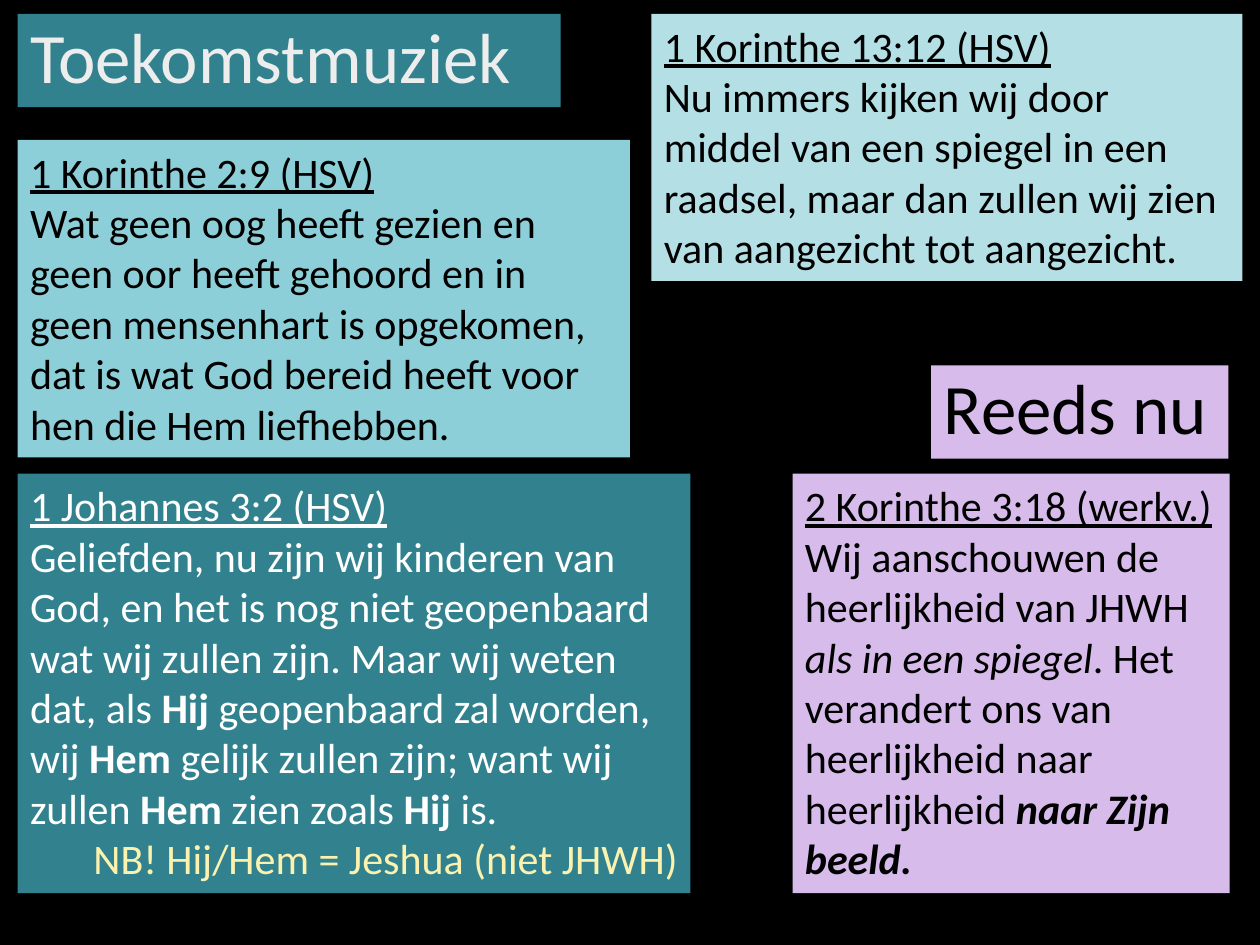
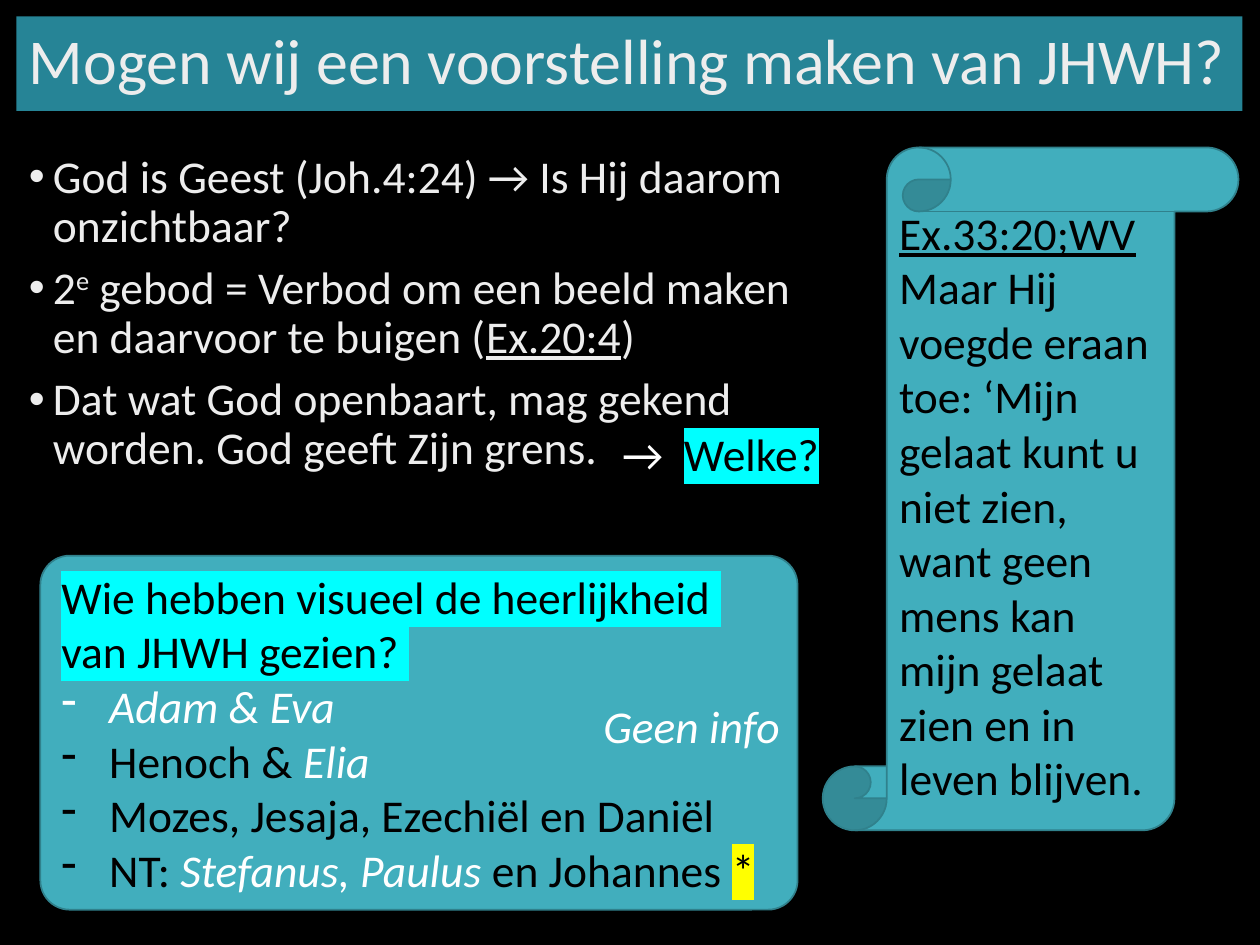
from dataclasses import dataclass

from lxml import etree
from pptx import Presentation
from pptx.dml.color import RGBColor
from pptx.enum.shapes import MSO_SHAPE
from pptx.enum.text import MSO_ANCHOR, MSO_AUTO_SIZE, PP_ALIGN
from pptx.oxml.ns import qn
from pptx.util import Inches, Pt

RECT, ROUNDED, SCROLL = (MSO_SHAPE.RECTANGLE, MSO_SHAPE.ROUNDED_RECTANGLE,
                         MSO_SHAPE.VERTICAL_SCROLL)
TOP, MIDDLE = MSO_ANCHOR.TOP, MSO_ANCHOR.MIDDLE
LEFT, RIGHT = PP_ALIGN.LEFT, PP_ALIGN.RIGHT
TITLE_AND_BODY, TITLE_ONLY = 1, 5


@dataclass(frozen=True)
class Theme:
    font: str = "Calibri"
    heading: float = 40.5
    long_heading: float = 36.5
    verse: float = 24
    body: float = 26
    black: str = "000000"
    white: str = "FFFFFF"
    silver: str = "EDEDED"
    cream: str = "FBF2B0"
    deep_teal: str = "31828E"
    title_teal: str = "268496"
    aqua: str = "8DCFD8"
    pale_aqua: str = "B3DFE5"
    lilac: str = "D6BBEB"
    turquoise: str = "41AEBD"
    outline: str = "30818C"
    cyan: str = "00FFFF"
    yellow: str = "FFFF00"


T = Theme()
BOLD, ITALIC, UNDERLINE = {"bold": True}, {"italic": True}, {"underline": True}
SUPERSCRIPT = {"raised": True}
WHITE_ITALIC = {"color": T.white, "italic": True}
CYAN_MARK, YELLOW_MARK = {"mark": T.cyan}, {"mark": T.yellow}


class Deck:
    def __init__(self):
        self.prs = Presentation()
        self.prs.slide_width, self.prs.slide_height = Inches(10), Inches(7.5)
        self.s = None

    def slide(self, layout):
        self.s = self.prs.slides.add_slide(self.prs.slide_layouts[layout])
        fill = self.s.background.fill
        fill.solid()
        fill.fore_color.rgb = RGBColor.from_string(T.black)

    def place(self, sp, box):
        sp.left, sp.top, sp.width, sp.height = map(Inches, box)

    def fill(self, sp, color):
        sp.fill.solid()
        sp.fill.fore_color.rgb = RGBColor.from_string(color)

    def add_run(self, p, text, size, color, bold=None, italic=None,
                underline=None, raised=False, mark=None):
        r = p.add_run()
        r.text = text
        f = r.font
        f.name, f.size = T.font, Pt(size)
        f.bold, f.italic, f.underline = bold, italic, underline
        f.color.rgb = RGBColor.from_string(color)
        rpr = r._r.get_or_add_rPr()
        if raised:
            rpr.set("baseline", "30000")
        if mark:
            highlight = etree.Element(qn("a:highlight"))
            etree.SubElement(highlight, qn("a:srgbClr"), val=mark)
            rpr.find(qn("a:solidFill")).addnext(highlight)

    def bullet(self, p, char, indent):
        ppr = p._p.get_or_add_pPr()
        ppr.set("marL", str(Inches(indent)))
        ppr.set("indent", str(-Inches(indent)))
        etree.SubElement(ppr, qn("a:buChar"), char=char)

    def tab_stop(self, p, pos):
        tabs = etree.SubElement(p._p.get_or_add_pPr(), qn("a:tabLst"))
        etree.SubElement(tabs, qn("a:tab"), pos=str(Inches(pos)), algn="l")

    def set_text(self, sp, paragraphs, size, color, anchor=TOP, spacing=None):
        """Each paragraph is a list of strings or (string, style) pairs."""
        tf = sp.text_frame
        tf.word_wrap, tf.vertical_anchor = True, anchor
        tf.auto_size = MSO_AUTO_SIZE.NONE
        for i, runs in enumerate(paragraphs):
            p = tf.add_paragraph() if i else tf.paragraphs[0]
            p.alignment = LEFT
            if spacing:
                p.line_spacing = spacing
            for item in runs:
                text, style = (item, {}) if isinstance(item, str) else item
                self.add_run(p, text, size, **{"color": color, **style})
        return tf.paragraphs

    def heading(self, sp, text, size, color):
        self.set_text(sp, [[text]], size, color, MIDDLE, 0.9)

    def title(self, text, box, fill, size, color):
        sp = self.s.shapes.title
        self.place(sp, box)
        self.fill(sp, fill)
        self.heading(sp, text, size, color)

    def body(self, box, items):
        sp = self.s.placeholders[1]
        self.place(sp, box)
        for i, p in enumerate(self.set_text(sp, items, T.body, T.silver, spacing=0.9)):
            p.space_before = Pt(7.5 if i else 0)
            self.bullet(p, "•", 0.19)

    def panel(self, box, fill, kind=RECT, line=None, adj=None):
        sp = self.s.shapes.add_shape(kind, *map(Inches, box))
        sp.shadow.inherit = False
        self.fill(sp, fill)
        if line:
            sp.line.color.rgb = RGBColor.from_string(line)
            sp.line.width = Pt(1)
        else:
            sp.line.fill.background()
        if adj:
            sp.adjustments[0] = adj
        return sp

    def verse(self, box, fill, source, *paragraphs, color=T.black):
        return self.set_text(self.panel(box, fill),
                             [[(source, UNDERLINE)], *paragraphs], T.verse, color)

    def label(self, box, runs):
        sp = self.s.shapes.add_textbox(*map(Inches, box))
        return self.set_text(sp, [runs], T.body, T.white)[0]


def build_future(d):
    d.slide(TITLE_ONLY)
    d.title("Reeds nu", (7.39, 2.9, 2.36, 0.74), T.lilac, T.heading, T.black)
    d.verse((5.17, 0.11, 4.69, 2.12), T.pale_aqua, "1 Korinthe 13:12 (HSV)",
            ["Nu immers kijken wij door middel van een spiegel in een raadsel, "
             "maar dan zullen wij zien van aangezicht tot aangezicht."])
    d.verse((0.14, 1.11, 4.86, 2.52), T.aqua, "1 Korinthe 2:9 (HSV)",
            ["Wat geen oog heeft gezien en geen oor heeft gehoord en in geen "
             "mensenhart is opgekomen, dat is wat God bereid heeft voor hen "
             "die Hem liefhebben."])
    johannes = d.verse(
        (0.14, 3.76, 5.34, 3.33), T.deep_teal, "1 Johannes 3:2 (HSV)",
        ["Geliefden, nu zijn wij kinderen van God, en het is nog niet "
         "geopenbaard wat wij zullen zijn. Maar wij weten dat, als ",
         ("Hij", BOLD), " geopenbaard zal worden, wij ", ("Hem", BOLD),
         " gelijk zullen zijn; want wij zullen ", ("Hem", BOLD),
         " zien zoals ", ("Hij", BOLD), " is."],
        [("NB! Hij/Hem = Jeshua (niet JHWH)", {"color": T.cream})],
        color=T.white)
    johannes[-1].alignment = RIGHT
    d.verse((6.29, 3.76, 3.47, 3.33), T.lilac, "2 Korinthe 3:18 (werkv.)",
            ["Wij aanschouwen de heerlijkheid van JHWH ",
             ("als in een spiegel", ITALIC),
             ". Het verandert ons van heerlijkheid naar heerlijkheid ",
             ("naar Zijn beeld.", {**BOLD, **ITALIC})])
    d.heading(d.panel((0.14, 0.11, 4.31, 0.74), T.deep_teal),
              "Toekomstmuziek", T.heading, T.silver)


def build_image_question(d):
    d.slide(TITLE_AND_BODY)
    d.title("Mogen wij een voorstelling maken van JHWH?",
            (0.13, 0.13, 9.73, 0.75), T.title_teal, T.long_heading, T.silver)
    d.body((0.13, 1.17, 6.55, 2.7), [
        ["God is Geest (Joh.4:24) → Is Hij daarom onzichtbaar?"],
        ["2", ("e", SUPERSCRIPT),
         " gebod = Verbod om een beeld maken en daarvoor te buigen (",
         ("Ex.20:4", UNDERLINE), ")"],
        ["Dat wat God openbaart, mag gekend worden. God geeft Zijn grens."]])

    scroll = d.panel((6.53, 1.17, 3.3, 5.42), T.turquoise, SCROLL, T.outline, 0.154)
    d.set_text(scroll, [
        [("Ex.33:20;WV", UNDERLINE)],
        ["Maar Hij voegde eraan toe: ‘Mijn gelaat kunt u niet zien, want geen "
         "mens kan mijn gelaat zien en in leven blijven."]],
        T.body, T.black, MIDDLE)

    witnesses = d.panel((0.32, 4.41, 6.01, 2.81), T.turquoise, ROUNDED, T.outline, 0.083)
    lines = d.set_text(witnesses, [
        [("Wie hebben visueel de heerlijkheid ", CYAN_MARK)],
        [("van JHWH gezien? ", CYAN_MARK)],
        [("Adam & Eva", WHITE_ITALIC)],
        ["Henoch & ", ("Elia", WHITE_ITALIC)],
        ["Mozes, Jesaja, Ezechiël en Daniël"],
        ["NT: ", ("Stefanus, Paulus ", WHITE_ITALIC), "en Johannes ",
         ("*", YELLOW_MARK)]],
        T.body, T.black, MIDDLE)
    for p in lines[2:]:
        d.bullet(p, "-", 0.38)

    which = d.label((4.84, 3.33, 1.84, 0.54),
                    ["→\t", ("Welke?", {"color": T.black, **CYAN_MARK})])
    d.tab_stop(which, 0.49)
    d.label((4.69, 5.49, 1.84, 0.54), [("Geen info", ITALIC)])


def main():
    d = Deck()
    build_future(d)
    build_image_question(d)
    d.prs.save("out.pptx")


if __name__ == "__main__":
    main()
